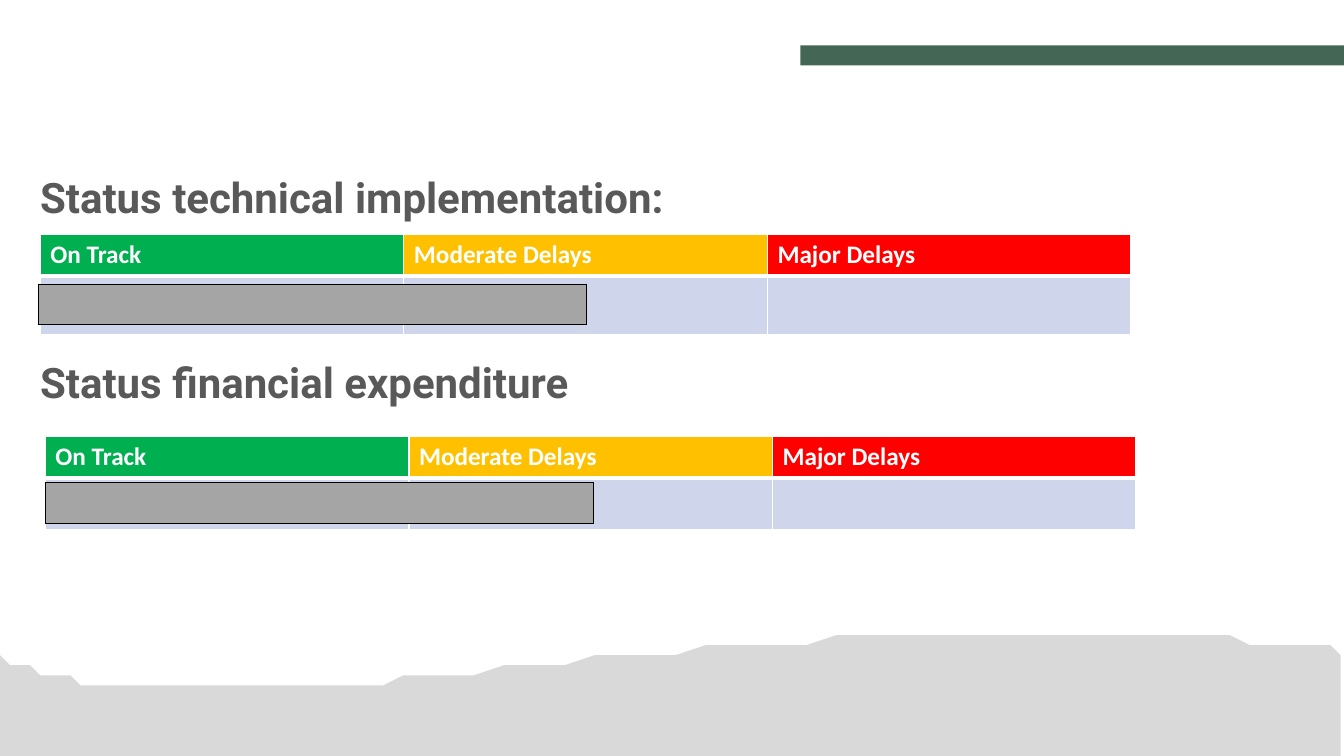
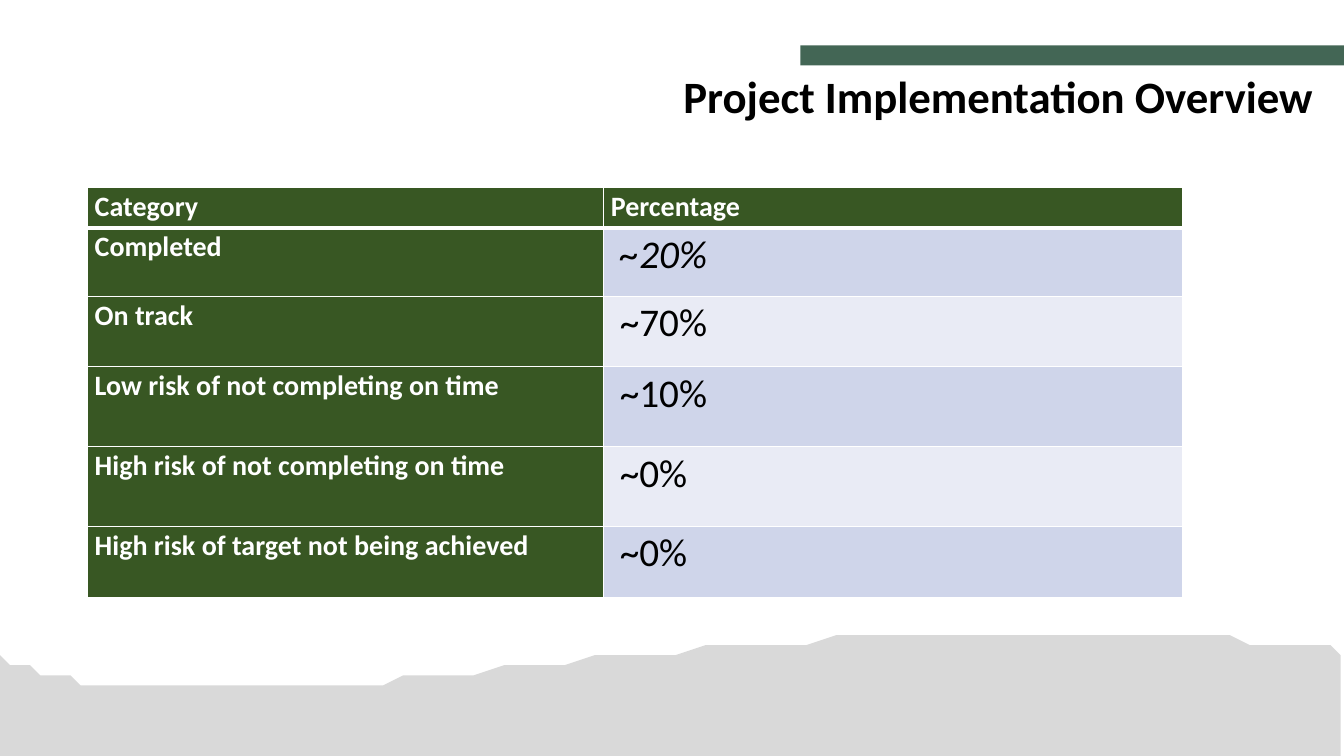
import dataclasses

import lxml.etree
import pptx
import pptx.dml.color
import pptx.enum.shapes
import pptx.oxml.ns
import pptx.util

COLUMNS, ROWS = 133.33, 75  # the slide in square grid units of a tenth of an inch


@dataclasses.dataclass(frozen=True)
class Theme:
    heading_font: str = "Roboto"
    body_font: str = "Calibri"
    title_size: int = 32
    heading_size: int = 30
    value_size: int = 28
    category_size: int = 20
    status_size: int = 18
    black: str = "000000"
    white: str = "FFFFFF"
    heading: str = "595959"
    wave: str = "D9D9D9"
    band: str = "436655"
    category: str = "385723"
    on_track: str = "00B050"
    moderate: str = "FFC000"
    major: str = "FF0000"
    progress: str = "A5A5A5"
    stripes: tuple = ("CFD5EA", "E9EBF5")


THEME = Theme()


def grid(units):
    return pptx.util.Inches(units / 10)


def color(value):
    return pptx.dml.color.RGBColor.from_string(value)


def paint(shape, fill):
    shape.shadow.inherit = False
    shape.fill.solid()
    shape.fill.fore_color.rgb = color(fill)
    shape.line.fill.background()


def write(frame, text, size, ink, font=THEME.body_font, bold=True, italic=False):
    frame.text = text
    para = frame.paragraphs[0]
    for span in para.runs:
        span.font.name = font
        span.font.size = pptx.util.Pt(size)
        span.font.color.rgb = color(ink)
        span.font.bold = bold
        span.font.italic = italic
    return para


def add_text(page, place, text, size, ink, **style):
    box = page.shapes.add_textbox(*map(grid, place))
    box.text_frame.word_wrap = True
    return write(box.text_frame, text, size, ink, **style)


def add_grid_table(page, left, top, widths, heights):
    frame = page.shapes.add_table(len(heights), len(widths), grid(left), grid(top),
                                  grid(sum(widths)), grid(sum(heights)))
    table = frame.table
    table.first_row = table.horz_banding = False
    for column, width in zip(table.columns, widths):
        column.width = grid(width)
    for row, height in zip(table.rows, heights):
        row.height = grid(height)
    return table


def style_cell(cell, fill, border=THEME.white, bottom=1):
    cell.fill.solid()
    cell.fill.fore_color.rgb = color(fill)
    properties = cell._tc.get_or_add_tcPr()
    for index, (side, width) in enumerate(zip("LRTB", (1, 1, 1, bottom))):
        line = lxml.etree.Element(pptx.oxml.ns.qn(f"a:ln{side}"), w=str(pptx.util.Pt(width)))
        solid = lxml.etree.SubElement(line, pptx.oxml.ns.qn("a:solidFill"))
        lxml.etree.SubElement(solid, pptx.oxml.ns.qn("a:srgbClr"), val=border)
        properties.insert(index, line)


def bezier(start, first, second, end, steps=40):
    for step in range(1, steps + 1):
        t = step / steps
        weights = ((1 - t) ** 3, 3 * t * (1 - t) ** 2, 3 * t * t * (1 - t), t ** 3)
        yield tuple(sum(weight * point[axis] for weight, point
                        in zip(weights, (start, first, second, end))) for axis in (0, 1))


def decorate_layout(layout, page):
    """Draw the wave and the band on a page and move them to its layout."""
    for placeholder in list(layout.placeholders):
        layout.shapes.element.remove(placeholder.element)
    right, middle, left = (COLUMNS, 64.6), (50.2, 66.3), (0, 65.1)
    builder = page.shapes.build_freeform(COLUMNS, ROWS, scale=grid(1))
    builder.add_line_segments([
        right,
        *bezier(right, (116.5, 62.2), (90.2, 61.6), middle),
        *bezier(middle, (13.3, 70.7), (2.6, 66.8), left),
        (0, ROWS),
    ], close=True)
    wave = builder.convert_to_shape()
    band_left = 79.4
    band = page.shapes.add_shape(pptx.enum.shapes.MSO_SHAPE.RECTANGLE, grid(band_left),
                                 grid(4.5), grid(COLUMNS - band_left), grid(2))
    for shape, fill in ((wave, THEME.wave), (band, THEME.band)):
        paint(shape, fill)
        layout.shapes.element.append(shape.element)


def add_heading(page, top, text):
    para = add_text(page, (3, top, 121.5, 6.5), text, THEME.heading_size,
                    THEME.heading, font=THEME.heading_font)
    para.line_spacing = pptx.util.Pt(40)


def add_status_table(page, left, top, track_height):
    levels = (("On Track", THEME.on_track), ("Moderate Delays", THEME.moderate),
              ("Major Delays", THEME.major))
    table = add_grid_table(page, left, top, [36.07] * len(levels), [4.1, track_height])
    for column, (label, fill) in enumerate(levels):
        header = table.cell(0, column)
        write(header.text_frame, label, THEME.status_size, THEME.white)
        style_cell(header, fill, bottom=3)
        style_cell(table.cell(1, column), THEME.stripes[0])


def add_progress_bar(page, left, top):
    table = add_grid_table(page, left, top, [54.4], [4])
    style_cell(table.cell(0, 0), THEME.progress, border=THEME.black)


def build_status_page(page):
    add_heading(page, 16, "Status technical implementation:")
    add_heading(page, 34.3, "Status financial expenditure")
    add_status_table(page, 4, 23.3, 5.8)
    add_status_table(page, 4.5, 43.3, 5.1)
    add_progress_bar(page, 3.8, 28.2)
    add_progress_bar(page, 4.5, 47.9)


def add_overview_table(page, rows):
    table = add_grid_table(page, 8.7, 18.6, [51.2, 57.4], [4, 6.8, 7, 7.9, 7.9, 7.1])
    for index, texts in enumerate(rows):
        for column, text in enumerate(texts):
            cell = table.cell(index, column)
            is_value = index > 0 and column > 0
            cell.margin_left = grid(1.6 if is_value else 0.7)
            cell.margin_right = grid(0.7)
            cell.margin_top = cell.margin_bottom = 0
            if is_value:
                para = write(cell.text_frame, text, THEME.value_size, THEME.black,
                             bold=False, italic=index == 1)
                fill = THEME.stripes[(index - 1) % 2]
            else:
                para = write(cell.text_frame, text, THEME.category_size, THEME.white)
                fill = THEME.category
            para.line_spacing = 1.07
            style_cell(cell, fill, bottom=3 if index == 0 else 1)


def build_overview_page(page):
    add_overview_table(page, (
        ("Category", "Percentage"),
        ("Completed", "~20%"),
        ("On track", "~70%"),
        ("Low risk of not completing on time", "~10%"),
        ("High risk of not completing on time", "~0%"),
        ("High risk of target not being achieved", "~0%"),
    ))
    add_text(page, (66.8, 6.3, 66.5, 6.4), "Project Implementation Overview",
             THEME.title_size, THEME.black)


def main():
    deck = pptx.Presentation()
    deck.slide_width, deck.slide_height = grid(COLUMNS), grid(ROWS)
    blank = deck.slide_layouts[6]
    status_page = deck.slides.add_slide(blank)
    overview_page = deck.slides.add_slide(blank)
    decorate_layout(blank, status_page)
    build_status_page(status_page)
    build_overview_page(overview_page)
    deck.save("out.pptx")


if __name__ == "__main__":
    main()
